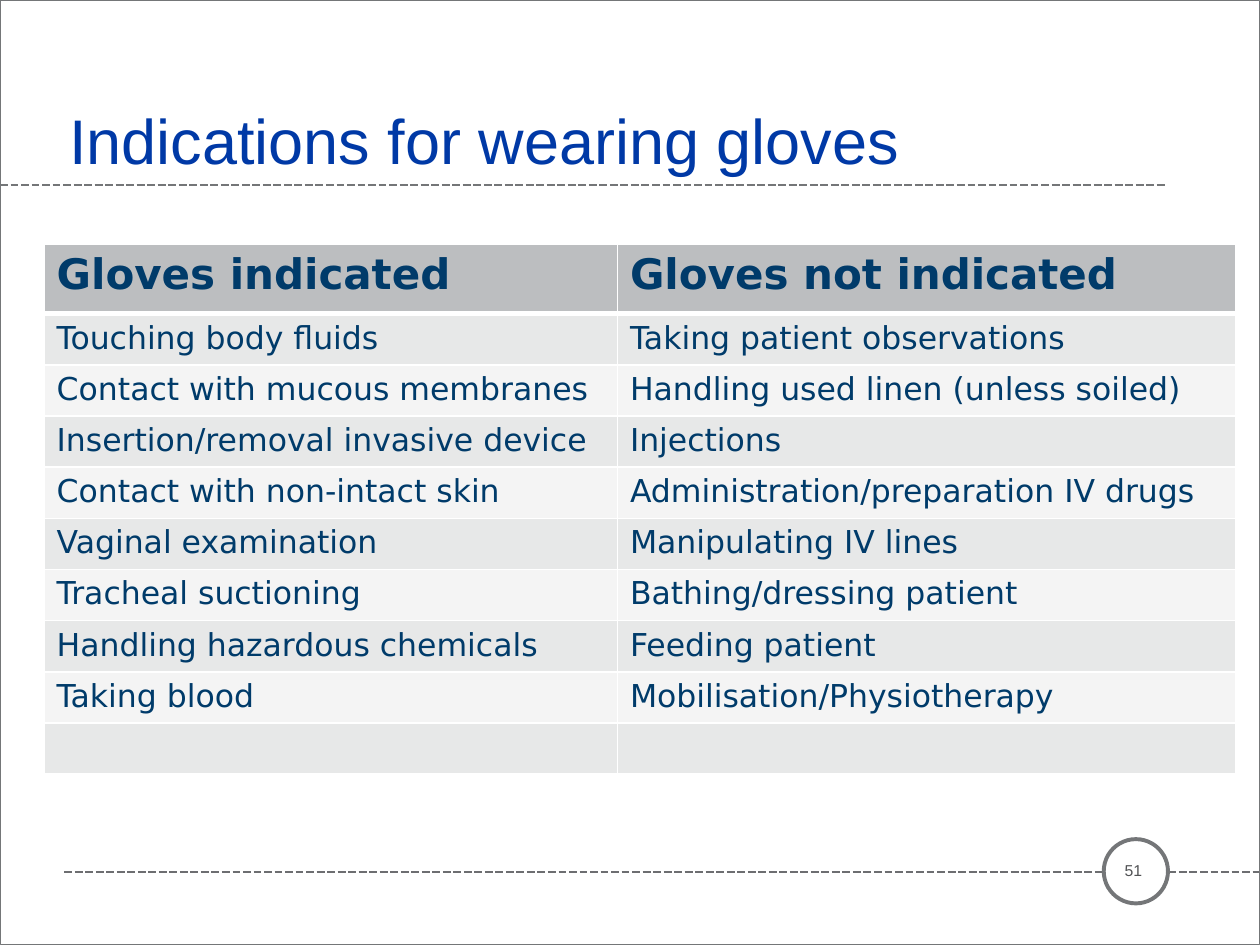
from lxml.etree import SubElement as Sub
from pptx import Presentation
from pptx.dml.color import RGBColor as RGB
from pptx.enum.dml import MSO_LINE as Dash
from pptx.enum.shapes import MSO_CONNECTOR as Conn, MSO_SHAPE as Kind
from pptx.enum.text import MSO_ANCHOR as Anchor, MSO_AUTO_SIZE as Fit, PP_ALIGN as Align
from pptx.oxml.ns import qn
from pptx.util import Inches, Pt

# The slide is a grid of 100 columns by 75 rows of square units.
UNIT = Inches(0.1)
WIDE, HIGH = 100, 75

WHITE = RGB(0xFF, 0xFF, 0xFF)
BLUE = RGB(0x00, 0x39, 0xA6)
NAVY = RGB(0x00, 0x3B, 0x6A)
GREY = RGB(0x74, 0x76, 0x78)
SLATE = RGB(0x6D, 0x6E, 0x71)
DARK = RGB(0x52, 0x53, 0x55)
HEAD = RGB(0xBC, 0xBE, 0xC0)
BANDS = RGB(0xE7, 0xE8, 0xE8), RGB(0xF4, 0xF4, 0xF4)

TABLE = [
    ("Gloves indicated", "Gloves not indicated"),
    ("Touching body fluids", "Taking patient observations"),
    ("Contact with mucous membranes", "Handling used linen (unless soiled)"),
    ("Insertion/removal invasive device", "Injections"),
    ("Contact with non-intact skin", "Administration/preparation IV drugs"),
    ("Vaginal examination", "Manipulating IV lines"),
    ("Tracheal suctioning", "Bathing/dressing patient"),
    ("Handling hazardous chemicals", "Feeding patient"),
    ("Taking blood", "Mobilisation/Physiotherapy"),
    ("", ""),
]


def grid(*units):
    return [round(u * UNIT) for u in units]


def write(frame, text, size, face, color, bold=False):
    run = frame.paragraphs[0].add_run()
    run.text = text
    font = run.font
    font.size, font.name, font.bold = Pt(size), face, bold
    font.color.rgb = color


def add_rule(slide, left, right, row, color):
    """Draw a dashed horizontal line."""
    rule = slide.shapes.add_connector(Conn.STRAIGHT, *grid(left, row, right, row))
    rule.line.color.rgb = color
    rule.line.width = Pt(1.5)
    rule.line.dash_style = Dash.SQUARE_DOT
    Sub(rule.element.spPr, qn("a:effectLst"))


def add_shape(slide, kind, box, width, fill=None):
    shape = slide.shapes.add_shape(kind, *grid(*box))
    shape.shadow.inherit = False
    if fill is None:
        shape.fill.background()
    else:
        shape.fill.solid()
        shape.fill.fore_color.rgb = fill
    shape.line.color.rgb = GREY
    shape.line.width = Pt(width)


def set_edges(cell, top, bottom):
    """Give a cell white borders; they must precede its fill in the XML."""
    props = cell._tc.get_or_add_tcPr()
    for side, width in ("L", 1), ("R", 1), ("T", top), ("B", bottom):
        edge = Sub(props, qn(f"a:ln{side}"), w=str(Pt(width)))
        Sub(Sub(edge, qn("a:solidFill")), qn("a:srgbClr"), val=str(WHITE))


def add_table(slide, data):
    shape = slide.shapes.add_table(len(data), 2, *grid(3.5, 19.4, 94.6, 42.1))
    table = shape.table
    for col, wide in zip(table.columns, grid(45.5, 49.1)):
        col.width = wide
    for r, texts in enumerate(data):
        first = r == 0
        table.rows[r].height = grid(5.5 if first else 4.06)[0]
        for c, text in enumerate(texts):
            cell = table.cell(r, c)
            set_edges(cell, 3 if r == 1 else 1, 3 if first else 1)
            cell.fill.solid()
            cell.fill.fore_color.rgb = HEAD if first else BANDS[(r - 1) % 2]
            if text:
                write(cell.text_frame, text, 24 if first else 18,
                      "DejaVu Sans", NAVY, first)


def set_title(slide, text):
    title = slide.shapes.title
    title.left, title.top, title.width, title.height = grid(4.5, 5.3, 76.2, 9.3)
    frame = title.text_frame
    frame.auto_size = Fit.NONE
    frame.vertical_anchor = Anchor.BOTTOM
    frame.paragraphs[0].alignment = Align.LEFT
    write(frame, text, 36, "Arial", BLUE)


def add_number(slide, text):
    add_shape(slide, Kind.OVAL, (87.6, 66.6, 5.1, 5.1), 2.25, WHITE)
    frame = slide.shapes.add_textbox(*grid(87.8, 66.8, 4.3, 4.5)).text_frame
    frame.word_wrap = True
    frame.margin_left = frame.margin_right = 0
    frame.vertical_anchor = Anchor.MIDDLE
    frame.paragraphs[0].alignment = Align.CENTER
    write(frame, text, 9, "Arial", DARK)


def main():
    deck = Presentation()
    deck.slide_width, deck.slide_height = grid(WIDE, HIGH)
    slide = deck.slides.add_slide(deck.slide_layouts[5])
    add_rule(slide, 5.1, WIDE, 69.2, SLATE)
    add_number(slide, "51")
    add_shape(slide, Kind.RECTANGLE, (0, 0, WIDE, HIGH), 0.5)
    add_rule(slide, 0, 92.5, 14.7, GREY)
    add_table(slide, TABLE)
    set_title(slide, "Indications for wearing gloves")
    deck.save("out.pptx")


if __name__ == "__main__":
    main()
